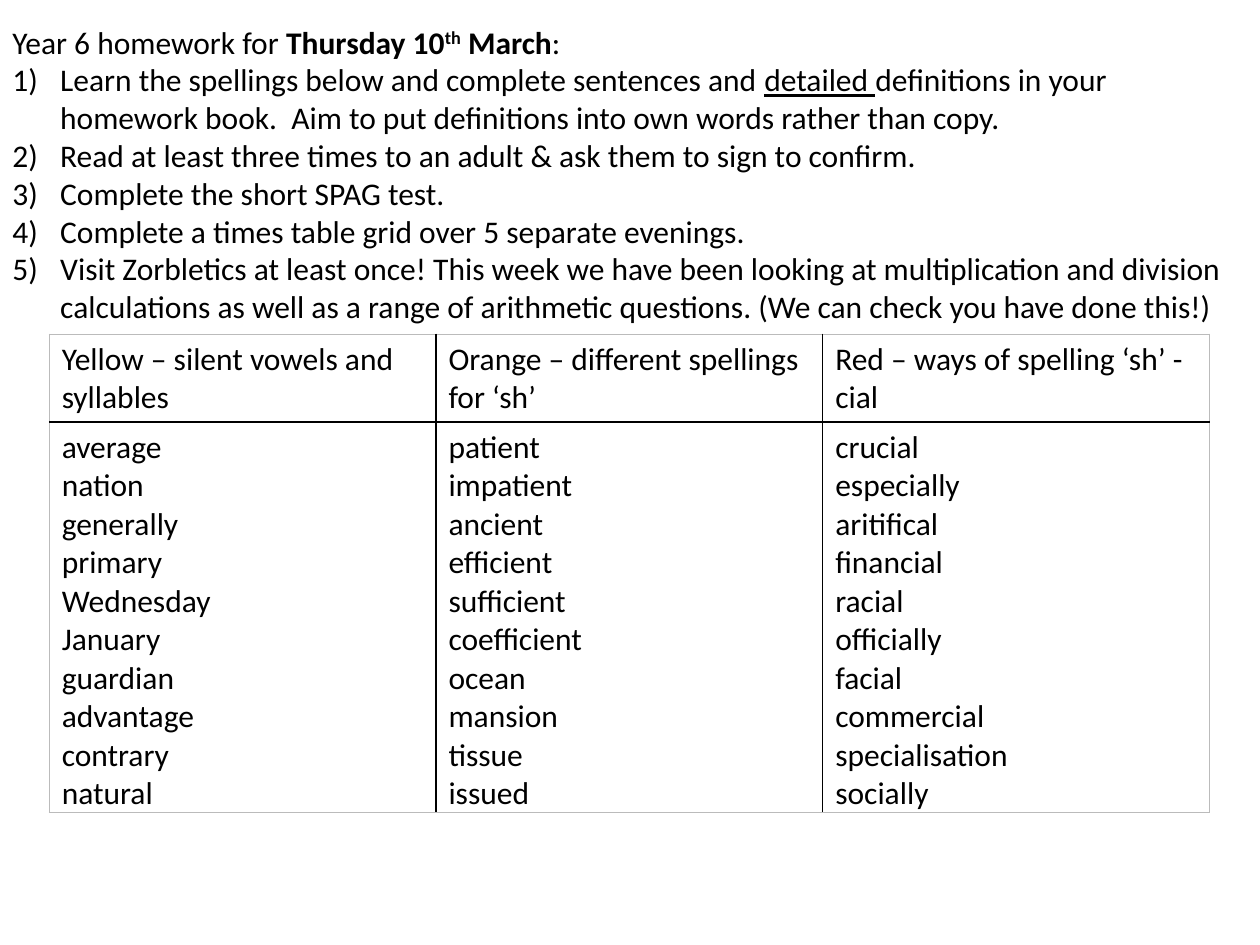
from dataclasses import dataclass

from lxml import etree
from pptx import Presentation
from pptx import util as u
from pptx.dml.color import RGBColor
from pptx.enum import text
from pptx.oxml import ns


@dataclass(frozen=True)
class Theme:
    font: str = "Calibri"
    size: float = 18
    line_spacing: float = 21.6
    ink: str = "000000"
    frame: str = "BBBBBB"
    frame_width: float = 0.5
    column_width: float = 1
    header_width: float = 1.5


def add_run(paragraph, content, theme, bold=False, underline=False, superscript=False):
    run = paragraph.add_run()
    run.text = content
    run.font.name = theme.font
    run.font.size = u.Pt(theme.size)
    run.font.color.rgb = RGBColor.from_string(theme.ink)
    run.font.bold = bold
    run.font.underline = underline
    if superscript:
        run._r.get_or_add_rPr().set("baseline", "30000")


def number_paragraph(paragraph, indent):
    properties = paragraph._p.get_or_add_pPr()
    properties.set("marL", str(u.Inches(indent)))
    properties.set("indent", str(-u.Inches(indent)))
    etree.SubElement(properties, ns.qn("a:buFont"), typeface="+mj-lt")
    etree.SubElement(properties, ns.qn("a:buAutoNum"), type="arabicParenR")


def set_border(cell, side, color, width):
    line = etree.SubElement(
        cell._tc.get_or_add_tcPr(), ns.qn(f"a:ln{side}"), w=str(u.Pt(width))
    )
    fill = etree.SubElement(line, ns.qn("a:solidFill"))
    etree.SubElement(fill, ns.qn("a:srgbClr"), val=color)


class HomeworkSlide:
    def __init__(self, presentation, theme):
        self.theme = theme
        self.slide = presentation.slides.add_slide(presentation.slide_layouts[6])

    def add_instructions(self, left, top, width, height, heading, tasks):
        box = self.slide.shapes.add_textbox(
            u.Inches(left), u.Inches(top), u.Inches(width), u.Inches(height)
        )
        frame = box.text_frame
        frame.word_wrap = True
        frame.auto_size = text.MSO_AUTO_SIZE.SHAPE_TO_FIT_TEXT
        for index, parts in enumerate([heading, *tasks]):
            paragraph = frame.add_paragraph() if index else frame.paragraphs[0]
            if index:
                number_paragraph(paragraph, 0.38)
            paragraph.line_spacing = u.Pt(self.theme.line_spacing)
            for content, style in parts:
                add_run(paragraph, content, self.theme, **style)

    def add_spelling_table(self, left, top, column_width, row_heights, groups):
        shape = self.slide.shapes.add_table(
            len(row_heights), len(groups), u.Inches(left), u.Inches(top),
            u.Inches(column_width * len(groups)), u.Inches(sum(row_heights)),
        )
        table = shape.table
        table.horz_banding = False
        for row, height in zip(table.rows, row_heights):
            row.height = u.Inches(height)
        for index, (title, words) in enumerate(groups.items()):
            table.columns[index].width = u.Inches(column_width)
            self.fill_cell(table, 0, index, [title])
            self.fill_cell(table, 1, index, words.split())
            table.cell(1, index).margin_bottom = 0

    def fill_cell(self, table, row, column, lines):
        cell = table.cell(row, column)
        frame = cell.text_frame
        for index, line in enumerate(lines):
            paragraph = frame.add_paragraph() if index else frame.paragraphs[0]
            add_run(paragraph, line, self.theme)
        theme = self.theme
        outer = (theme.frame, theme.frame_width)
        divider = (theme.ink, theme.column_width)
        rule = (theme.ink, theme.header_width)
        last_column = len(table.columns) - 1
        set_border(cell, "L", *(divider if column else outer))
        set_border(cell, "R", *(divider if column < last_column else outer))
        set_border(cell, "T", *(rule if row else outer))
        set_border(cell, "B", *(outer if row else rule))
        cell.fill.background()


HEADING = [
    ("Year 6 homework for ", {}),
    ("Thursday 10", {"bold": True}),
    ("th", {"bold": True, "superscript": True}),
    (" March", {"bold": True}),
    (":", {}),
]

TASKS = [
    [
        ("Learn the spellings below and complete sentences and ", {}),
        ("detailed ", {"underline": True}),
        ("definitions in your homework book.  Aim to put definitions into own "
         "words rather than copy.", {}),
    ],
    [("Read at least three times to an adult & ask them to sign to confirm.", {})],
    [("Complete the short SPAG test.", {})],
    [("Complete a times table grid over 5 separate evenings.", {})],
    [("Visit Zorbletics at least once! This week we have been looking at "
      "multiplication and division calculations as well as a range of "
      "arithmetic questions. (We can check you have done this!)", {})],
]

SPELLINGS = {
    "Yellow – silent vowels and syllables":
        "average nation generally primary Wednesday "
        "January guardian advantage contrary natural",
    "Orange – different spellings for ‘sh’":
        "patient impatient ancient efficient sufficient "
        "coefficient ocean mansion tissue issued",
    "Red – ways of spelling ‘sh’ - cial":
        "crucial especially aritifical financial racial "
        "officially facial commercial specialisation socially",
}


def main():
    presentation = Presentation()
    presentation.slide_width = u.Inches(10)
    presentation.slide_height = u.Inches(7.5)
    homework = HomeworkSlide(presentation, Theme())
    homework.add_instructions(0, 0.13, 10, 2.52, HEADING, TASKS)
    homework.add_spelling_table(0.39, 2.65, 3.07, [0.7, 3.1], SPELLINGS)
    presentation.save("out.pptx")


if __name__ == "__main__":
    main()
